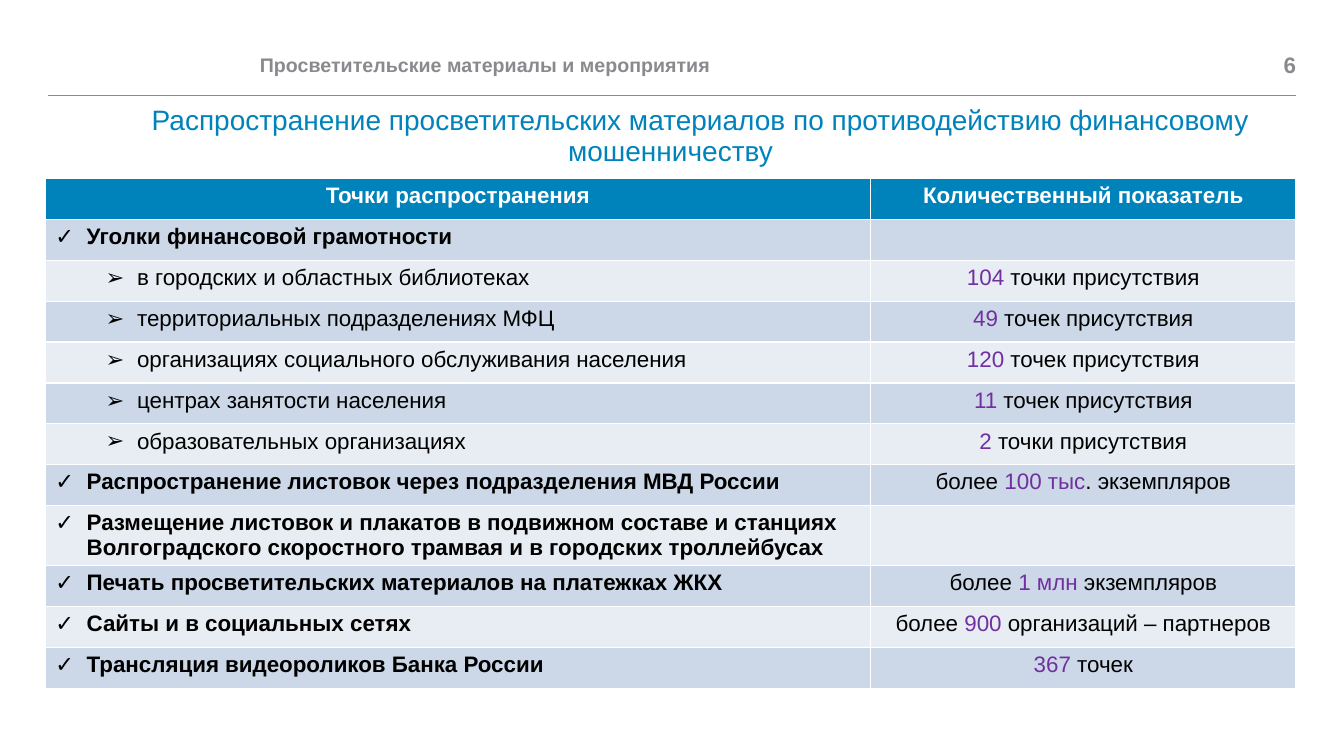
"""Build the slide on where anti-fraud materials are distributed."""
from lxml.etree import SubElement
from pptx import Presentation
from pptx.dml.color import RGBColor
from pptx.enum.shapes import MSO_CONNECTOR
from pptx.enum.text import MSO_ANCHOR, MSO_AUTO_SIZE, PP_ALIGN
from pptx.oxml.ns import qn
from pptx.util import Cm, Pt

BLUE, GREY, PURPLE, BLACK, WHITE = "0082BB", "888A8D", "7030A0", "000000", "FFFFFF"
BANDS = ("CCD8E7", "E7EDF3")
LEFT, WIDTH = 1.14, 31.52
FRAME_FORMAT = {"margin_left": 0, "margin_top": 0, "margin_right": 0, "margin_bottom": 0,
                "word_wrap": True, "auto_size": MSO_AUTO_SIZE.NONE}


def color(value):
    return RGBColor.from_string(value)


def add_run(paragraph, text, size, value, bold=False):
    run = paragraph.add_run()
    run.text = text
    for name, setting in {"name": "Arial", "size": Pt(size), "bold": bold}.items():
        setattr(run.font, name, setting)
    run.font.color.rgb = color(value)


presentation = Presentation()
presentation.slide_width, presentation.slide_height = Cm(33.87), Cm(19.05)
slide = presentation.slides.add_slide(presentation.slide_layouts[5])

header_line = slide.shapes.add_connector(
    MSO_CONNECTOR.STRAIGHT, Cm(1.2), Cm(2.41), Cm(32.66), Cm(2.41))
header_line.line.color.rgb = color(GREY)
header_line.line.width = Pt(0.5)
SubElement(header_line._element.spPr, qn("a:effectLst"))

section = slide.shapes.add_textbox(Cm(6.55), Cm(1.19), Cm(23.44), Cm(0.89))
page_number = slide.shapes.add_textbox(Cm(30.6), Cm(1.19), Cm(2.06), Cm(0.89))
title = slide.shapes.title
title.left, title.top, title.width, title.height = Cm(LEFT), Cm(2.69), Cm(WIDTH), Cm(1.63)

texts = [
    (section, "Просветительские материалы и мероприятия", 14, GREY, True,
     PP_ALIGN.LEFT, MSO_ANCHOR.MIDDLE),
    (page_number, "6", 16, GREY, True, PP_ALIGN.RIGHT, MSO_ANCHOR.MIDDLE),
    (title, "Распространение просветительских материалов по противодействию "
     "финансовому мошенничеству", 20, BLUE, False, PP_ALIGN.CENTER, MSO_ANCHOR.TOP),
]
for shape, text, size, value, bold, alignment, anchor in texts:
    for name, setting in FRAME_FORMAT.items():
        setattr(shape.text_frame, name, setting)
    shape.text_frame.vertical_anchor = anchor
    paragraph = shape.text_frame.paragraphs[0]
    paragraph.alignment = alignment
    add_run(paragraph, text, size, value, bold)

title_paragraph = title.text_frame.paragraphs[0]
title_paragraph.line_spacing = 0.9
title_paragraph._p.get_or_add_pPr().set("indent", str(Cm(1.5)))

headings = ("Точки распространения", "Количественный показатель")
channels = [
    ("✓", "Уголки финансовой грамотности", ()),
    ("➢", "в городских и областных библиотеках", ("", "104", " точки присутствия")),
    ("➢", "территориальных подразделениях МФЦ", ("", "49", " точек присутствия")),
    ("➢", "организациях социального обслуживания населения",
     ("", "120", " точек присутствия")),
    ("➢", "центрах занятости населения", ("", "11", " точек присутствия")),
    ("➢", "образовательных организациях", ("", "2", " точки присутствия")),
    ("✓", "Распространение листовок через подразделения МВД России",
     ("более ", "100 тыс", ". экземпляров")),
    ("✓", "Размещение листовок и плакатов в подвижном составе и станциях "
     "Волгоградского скоростного трамвая и в городских троллейбусах", ()),
    ("✓", "Печать просветительских материалов на платежках ЖКХ",
     ("более ", "1 млн ", "экземпляров")),
    ("✓", "Сайты и в социальных сетях", ("более ", "900", " организаций – партнеров")),
    ("✓", "Трансляция видеороликов Банка России", ("", "367", " точек")),
]

row_count = len(channels) + 1
table = slide.shapes.add_table(
    row_count, 2, Cm(LEFT), Cm(4.5), Cm(WIDTH), Cm(1.03 * row_count)).table
table.columns[0].width, table.columns[1].width = Cm(20.8), Cm(10.72)
for row in table.rows:
    row.height = Cm(1.03)

for cell, heading in zip(table.rows[0].cells, headings):
    cell.fill.solid()
    cell.fill.fore_color.rgb = color(BLUE)
    paragraph = cell.text_frame.paragraphs[0]
    paragraph.alignment = PP_ALIGN.CENTER
    add_run(paragraph, heading, 16, WHITE, True)

for index, (bullet, channel, amount) in enumerate(channels):
    channel_cell, amount_cell = table.rows[index + 1].cells
    for cell in (channel_cell, amount_cell):
        cell.fill.solid()
        cell.fill.fore_color.rgb = color(BANDS[index % 2])

    main_item = bullet == "✓"
    paragraph = channel_cell.text_frame.paragraphs[0]
    properties = paragraph._p.get_or_add_pPr()
    properties.set("marL", str(Cm(0.79 if main_item else 2.06)))
    properties.set("indent", str(Cm(-0.79)))
    SubElement(properties, qn("a:buFont"), typeface="Arial")
    SubElement(properties, qn("a:buChar"), char=bullet)
    add_run(paragraph, channel, 16, BLACK, main_item)

    paragraph = amount_cell.text_frame.paragraphs[0]
    paragraph.alignment = PP_ALIGN.CENTER
    for text, value in zip(amount, (BLACK, PURPLE, BLACK)):
        if text:
            add_run(paragraph, text, 16, value)

presentation.save("out.pptx")
